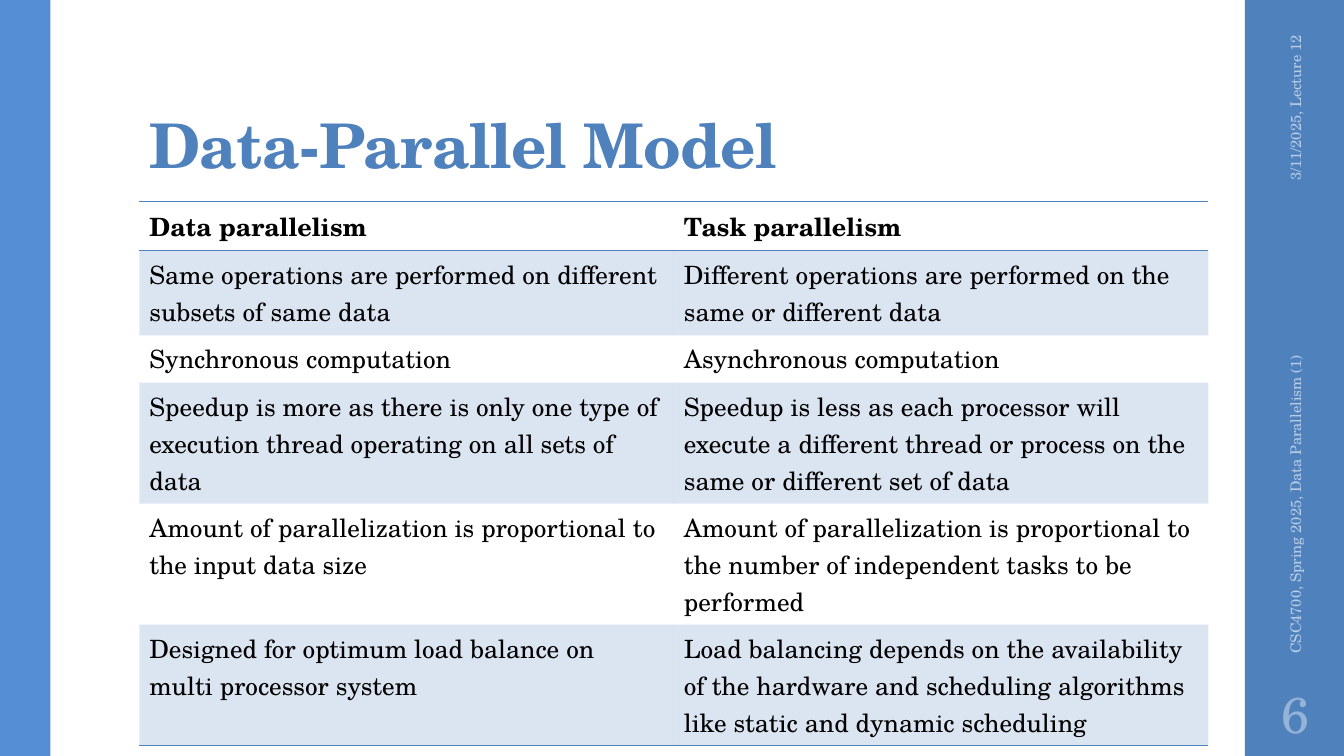
"""Builds a slide comparing data parallelism with task parallelism."""
from lxml import etree
from pptx import Presentation
from pptx.dml.color import RGBColor
from pptx.enum.shapes import MSO_SHAPE
from pptx.enum.text import MSO_ANCHOR, PP_ALIGN
from pptx.oxml.ns import qn
from pptx.util import Cm, Pt

RECTANGLE = MSO_SHAPE.RECTANGLE
MIDDLE, BOTTOM = MSO_ANCHOR.MIDDLE, MSO_ANCHOR.BOTTOM
LEFT, CENTER, RIGHT = PP_ALIGN.LEFT, PP_ALIGN.CENTER, PP_ALIGN.RIGHT

FONT = "TeX Gyre Schola"
COLORS = {
    "accent": "4F81BD",
    "left_bar": "558ED5",
    "footer": "B9CDE5",
    "number": "95B3D7",
    "text": "000000",
}
PLAIN_TABLE_STYLE = "{2D5ABB26-0587-4C30-8999-92F81FD0307C}"
BAND_ALPHA = "20000"
RULE_WIDTH = Pt(1)
ROW_HEIGHTS = [1.23, 2.14, 1.19, 3.05, 3.05, 3.05]

COMPARISON = [
    ("Data parallelism", "Task parallelism"),
    ("Same operations are performed on different subsets of same data",
     "Different operations are performed on the same or different data"),
    ("Synchronous computation", "Asynchronous computation"),
    ("Speedup is more as there is only one type of execution thread "
     "operating on all sets of data",
     "Speedup is less as each processor will execute a different thread "
     "or process on the same or different set of data"),
    ("Amount of parallelization is proportional to the input data size",
     "Amount of parallelization is proportional to the number of "
     "independent tasks to be performed"),
    ("Designed for optimum load balance on multi processor system",
     "Load balancing depends on the availability of the hardware and "
     "scheduling algorithms like static and dynamic scheduling"),
]


def color(name):
    """Return the named colour."""
    return RGBColor.from_string(COLORS[name])


def write(frame, text, *, size, ink="text", bold=False, align=LEFT,
          line_spacing=None, tracking=None):
    """Put formatted text into a text frame."""
    para = frame.paragraphs[0]
    para.alignment = align
    if line_spacing:
        para.line_spacing = line_spacing
    span = para.add_run()
    span.text = text
    span.font.name = FONT
    span.font.size = Pt(size)
    span.font.bold = bold
    span.font.color.rgb = color(ink)
    if tracking:
        span.font._element.set("spc", str(round(tracking * 100)))


def add_bar(page, left, width, fill):
    """Draw a full-height side bar."""
    bar = page.shapes.add_shape(RECTANGLE, Cm(left), 0, Cm(width), Cm(19.05))
    bar.shadow.inherit = False
    bar.fill.solid()
    bar.fill.fore_color.rgb = color(fill)
    bar.line.fill.background()


def add_text(page, text, left, top, width, height, *, anchor=MIDDLE,
             rotation=0, insets=(0.25, 0.13, 0.25, 0.13), **style):
    """Add a text box, with insets as left, top, right and bottom."""
    box = page.shapes.add_textbox(Cm(left), Cm(top), Cm(width), Cm(height))
    box.rotation = rotation
    frame = box.text_frame
    frame.word_wrap = True
    frame.vertical_anchor = anchor
    (frame.margin_left, frame.margin_top,
     frame.margin_right, frame.margin_bottom) = map(Cm, insets)
    write(frame, text, **style)


def add_rule(cell, side):
    """Draw an accent line on the given side (T or B) of a cell."""
    rule = etree.SubElement(cell._tc.get_or_add_tcPr(), qn(f"a:ln{side}"),
                            w=str(RULE_WIDTH))
    fill = etree.SubElement(rule, qn("a:solidFill"))
    etree.SubElement(fill, qn("a:srgbClr"), val=COLORS["accent"])


def shade(cell):
    """Fill a cell with the translucent accent colour."""
    cell.fill.solid()
    cell.fill.fore_color.rgb = color("accent")
    tint = cell._tc.tcPr.find(f"{qn('a:solidFill')}/{qn('a:srgbClr')}")
    etree.SubElement(tint, qn("a:alpha"), val=BAND_ALPHA)


def add_comparison(page, rows, heights, left, top, width):
    """Add the banded table with rules around its header and at its foot."""
    table = page.shapes.add_table(
        len(rows), len(rows[0]), Cm(left), Cm(top), Cm(width),
        Cm(sum(heights))).table
    table._tbl.tblPr.find(qn("a:tableStyleId")).text = PLAIN_TABLE_STYLE
    last = len(rows) - 1
    for row, (texts, height) in enumerate(zip(rows, heights)):
        table.rows[row].height = Cm(height)
        for column, text in enumerate(texts):
            cell = table.cell(row, column)
            write(cell.text_frame, text, size=18, bold=row == 0)
            if row == 0:
                add_rule(cell, "T")
            if row in (0, last):
                add_rule(cell, "B")
            if row % 2:
                shade(cell)
            else:
                cell.fill.background()


def main():
    """Build and save the slide."""
    deck = Presentation()
    deck.slide_width, deck.slide_height = Cm(33.87), Cm(19.05)
    page = deck.slides.add_slide(deck.slide_layouts[6])
    add_bar(page, 31.37, 2.54, "accent")
    add_bar(page, 0, 1.27, "left_bar")
    add_text(page, "Data-Parallel Model", 3.51, 0.81, 26.92, 3.89,
             anchor=BOTTOM, insets=(0.25, 0.08, 0.25, 0.13), size=44,
             ink="accent", bold=True, line_spacing=0.9, tracking=-0.5)
    add_comparison(page, COMPARISON, ROW_HEIGHTS, 3.51, 5.08, 26.94)
    add_text(page, "3/11/2025, Lecture 12", 30, 2.77, 5.28, 1.02,
             rotation=270, size=10.5, ink="footer", align=RIGHT)
    add_text(page, "CSC4700, Spring 2025, Data Parallelism (1)",
             27.66, 11.23, 9.96, 1.02, rotation=270, size=10.5, ink="footer")
    add_text(page, "6", 31.37, 17.15, 2.54, 1.65, insets=(0.13,) * 4,
             size=36, ink="number", align=CENTER)
    deck.save("out.pptx")


if __name__ == "__main__":
    main()
